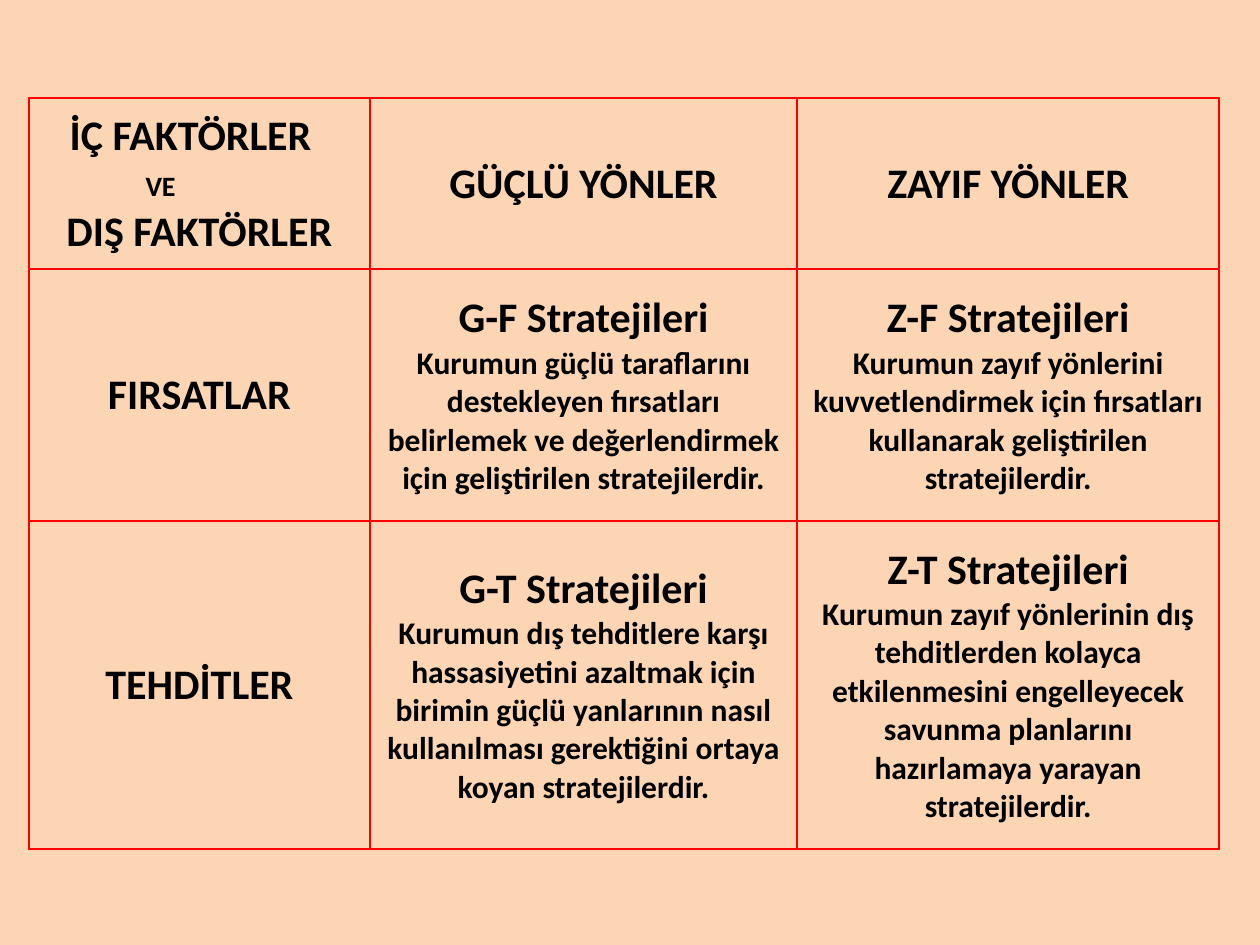
"""Build the SWOT strategy table slide."""
from pptx import Presentation
from pptx.dml.color import RGBColor as Rgb
from pptx.enum.text import MSO_ANCHOR as Anchor, PP_ALIGN as Align
from pptx.oxml import parse_xml
from pptx.oxml.ns import nsdecls
from pptx.util import Cm, Pt

HUES = {"back": "FCD5B5", "line": "FF0000", "text": "000000"}
FONT = "Calibri"
HEAD, BODY, LINK = 24, 18, 16
WIDTHS = [6.88, 8.61, 8.51]
HEIGHTS = [3.45, 5.08, 6.6]
LEFT, TOP = 0.58, 1.98

ROWS = [
    [
        [
            ("İÇ FAKTÖRLER", {"dent": 0.57}),
            ("VE", {"size": LINK, "dent": 2.1, "above": 5, "below": 1}),
            ("DIŞ FAKTÖRLER", {}),
        ],
        [("GÜÇLÜ YÖNLER", {})],
        [("ZAYIF YÖNLER", {})],
    ],
    [
        [("FIRSATLAR", {})],
        [
            ("G-F Stratejileri", {}),
            ("Kurumun güçlü taraflarını destekleyen fırsatları belirlemek ve "
             "değerlendirmek için geliştirilen stratejilerdir.", {"size": BODY}),
        ],
        [
            ("Z-F Stratejileri", {}),
            ("Kurumun zayıf yönlerini kuvvetlendirmek için fırsatları "
             "kullanarak geliştirilen stratejilerdir.", {"size": BODY}),
        ],
    ],
    [
        [("TEHDİTLER", {})],
        [
            ("G-T Stratejileri", {}),
            ("Kurumun dış tehditlere karşı hassasiyetini azaltmak için birimin "
             "güçlü yanlarının nasıl kullanılması gerektiğini ortaya koyan "
             "stratejilerdir.", {"size": BODY}),
        ],
        [
            ("Z-T Stratejileri", {}),
            ("Kurumun zayıf yönlerinin dış tehditlerden kolayca etkilenmesini "
             "engelleyecek savunma planlarını hazırlamaya yarayan "
             "stratejilerdir.", {"size": BODY}),
        ],
    ],
]


def write(para, text, size=HEAD, dent=None, above=0, below=0):
    para.alignment = Align.CENTER if dent is None else Align.LEFT
    if dent is not None:
        props = para._p.get_or_add_pPr()
        props.set("marL", str(Cm(dent)))
        props.set("indent", "0")
    para.space_before, para.space_after = Pt(above), Pt(below)
    run = para.add_run()
    run.text = text
    font = run.font
    font.name, font.size, font.bold = FONT, Pt(size), True
    font.color.rgb = Rgb.from_string(HUES["text"])


def frame(cell, width=1.5):
    props = cell._tc.get_or_add_tcPr()
    for spot, side in enumerate("LRTB"):
        props.insert(spot, parse_xml(
            f'<a:ln{side} {nsdecls("a")} w="{Pt(width)}"><a:solidFill>'
            f'<a:srgbClr val="{HUES["line"]}"/></a:solidFill></a:ln{side}>'))


def main():
    deck = Presentation()
    deck.slide_width, deck.slide_height = Cm(25.4), Cm(19.05)
    slide = deck.slides.add_slide(deck.slide_layouts[6])
    back = slide.background.fill
    back.solid()
    back.fore_color.rgb = Rgb.from_string(HUES["back"])

    table = slide.shapes.add_table(
        len(ROWS), len(WIDTHS), Cm(LEFT), Cm(TOP),
        Cm(sum(WIDTHS)), Cm(sum(HEIGHTS))).table
    table.first_row = table.horz_banding = False
    for col, width in zip(table.columns, WIDTHS):
        col.width = Cm(width)
    for row, height, cells in zip(table.rows, HEIGHTS, ROWS):
        row.height = Cm(height)
        for cell, lines in zip(row.cells, cells):
            cell.fill.background()
            cell.vertical_anchor = Anchor.MIDDLE
            frame(cell)
            body = cell.text_frame
            for spot, (text, style) in enumerate(lines):
                para = body.add_paragraph() if spot else body.paragraphs[0]
                write(para, text, **style)

    deck.save("out.pptx")


if __name__ == "__main__":
    main()
